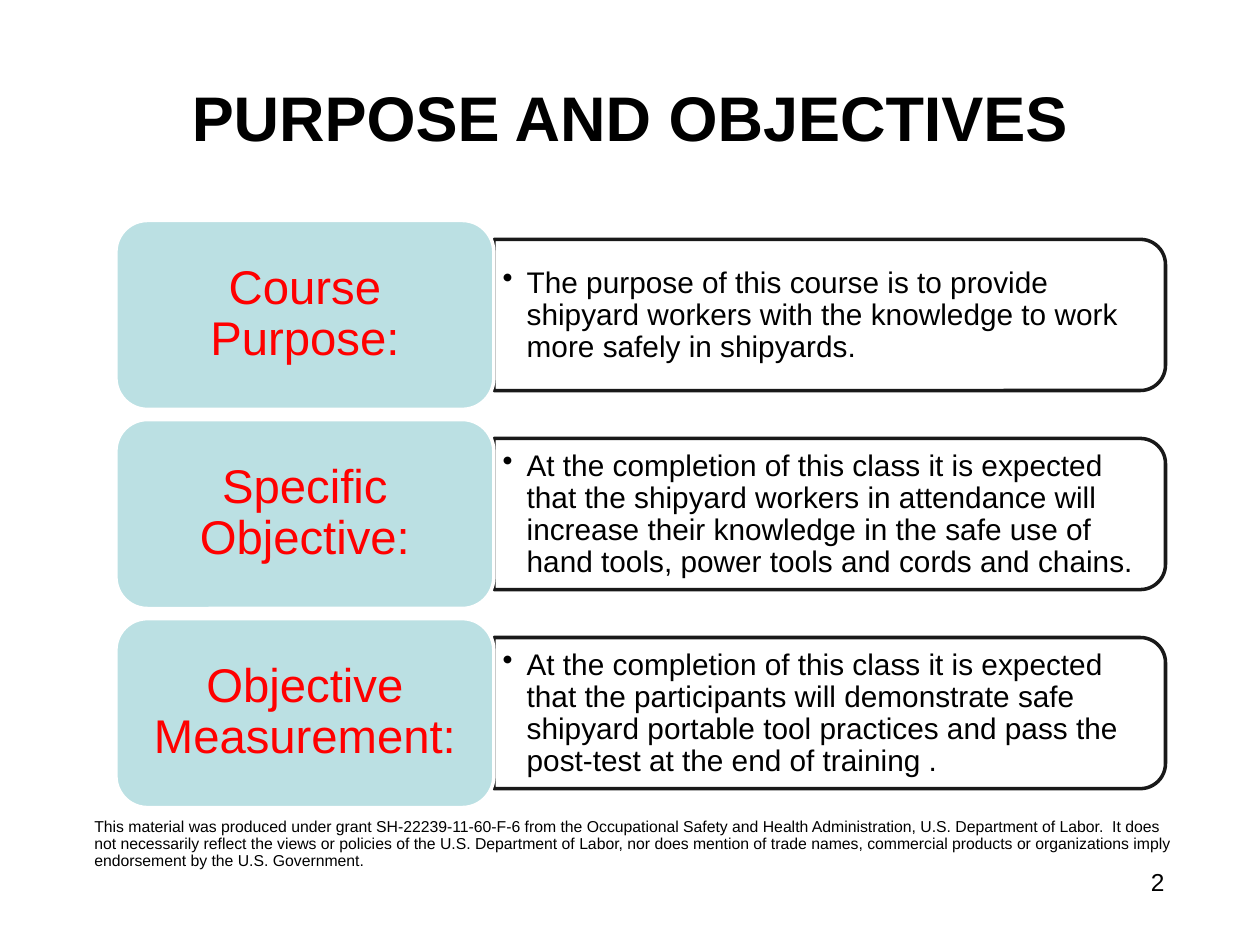
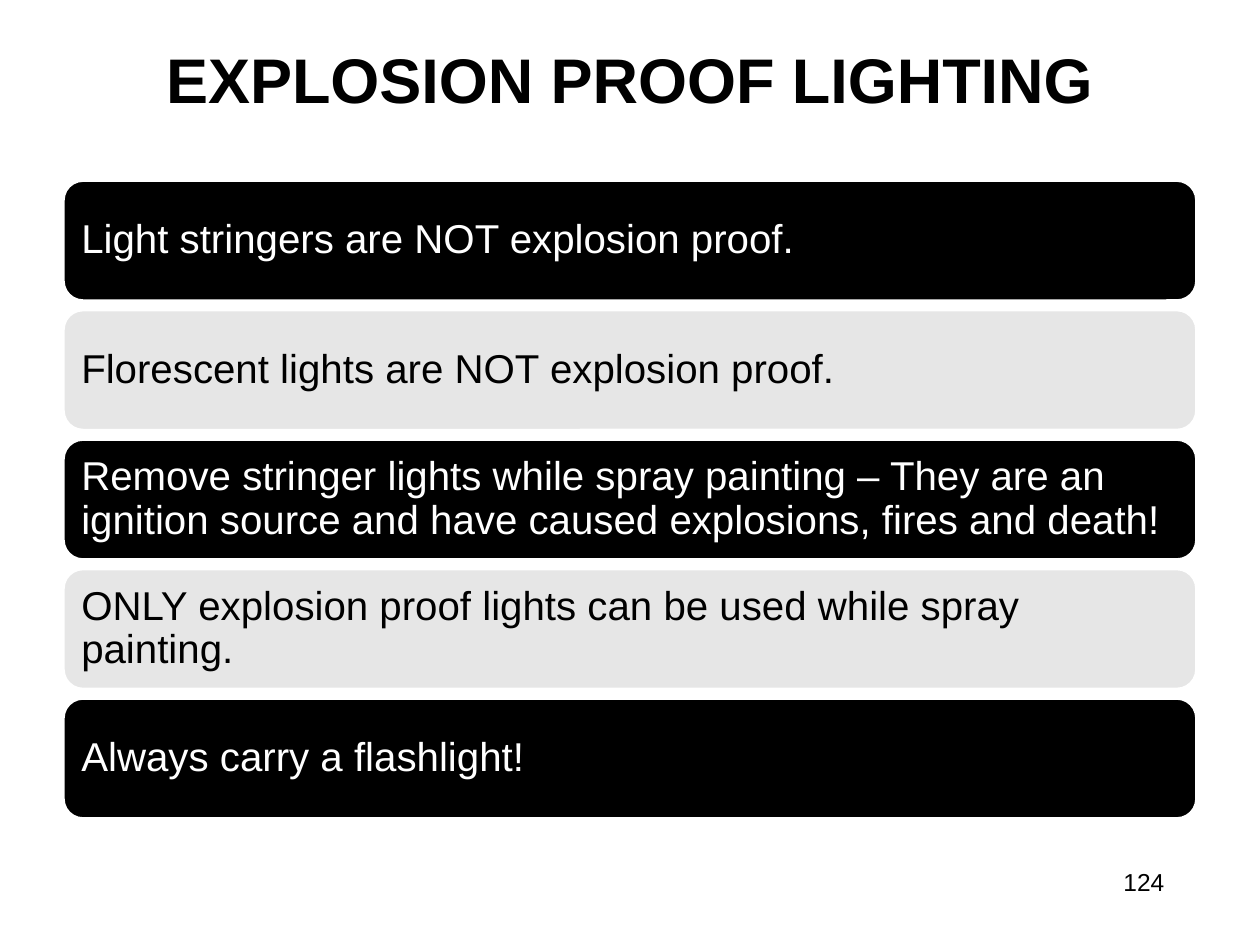
import pptx
import pptx.dml.color
import pptx.enum.shapes
import pptx.enum.text
import pptx.oxml.ns
import pptx.util
from lxml import etree

Inches = pptx.util.Inches
Pt = pptx.util.Pt
RGBColor = pptx.dml.color.RGBColor
ShapeKind = pptx.enum.shapes.MSO_SHAPE
Align = pptx.enum.text.PP_ALIGN
Anchor = pptx.enum.text.MSO_ANCHOR
qn = pptx.oxml.ns.qn

OBJECTIVES_TITLE = "PURPOSE AND OBJECTIVES"
OBJECTIVES = [
    ("Course Purpose:",
     "The purpose of this course is to provide shipyard workers with the "
     "knowledge to work more safely in shipyards."),
    ("Specific Objective:",
     "At the completion of this class it is expected that the shipyard workers "
     "in attendance will increase their knowledge in the safe use of hand "
     "tools, power tools and cords and chains."),
    ("Objective Measurement:",
     "At the completion of this class it is expected that the participants "
     "will demonstrate safe shipyard portable tool practices and pass the "
     "post-test at the end of training ."),
]
GRANT_NOTICE = (
    "This material was produced under grant SH-22239-11-60-F-6 from the "
    "Occupational Safety and Health Administration, U.S. Department of Labor.  "
    "It does not necessarily reflect the views or policies of the U.S. "
    "Department of Labor, nor does mention of trade names, commercial products "
    "or organizations imply endorsement by the U.S. Government."
)
LIGHTING_TITLE = "EXPLOSION PROOF LIGHTING"
LIGHTING_RULES = [
    "Light stringers are NOT explosion proof.",
    "Florescent lights are NOT explosion proof.",
    "Remove stringer lights while spray painting – They are an ignition source "
    "and have caused explosions, fires and death!",
    "ONLY explosion proof lights can be used while spray painting.",
    "Always carry a flashlight!",
]

FONT = "Arial"
BLACK = RGBColor(0x00, 0x00, 0x00)
WHITE = RGBColor(0xFF, 0xFF, 0xFF)
RED = RGBColor(0xFF, 0x00, 0x00)
PALE_TEAL = RGBColor(0xBB, 0xE0, 0xE3)
PALE_GRAY = RGBColor(0xE6, 0xE6, 0xE6)
BAR_STYLES = [(BLACK, WHITE), (PALE_GRAY, BLACK)]

LABEL_LEFT, LABEL_TOP, LABEL_WIDTH, LABEL_HEIGHT = 0.92, 1.75, 3, 1.5
LABEL_STEP = 1.58
PANEL_WIDTH, PANEL_HEIGHT = 5.33, 1.2
BULLET_INDENT = 0.19
BAR_LEFT, BAR_TOP, BAR_WIDTH, BAR_HEIGHT = 0.5, 1.43, 9, 0.96
BAR_BOTTOM = 6.5


def write(shape, text, size, color=BLACK, align=Align.LEFT, anchor=Anchor.MIDDLE,
          insets=(0.1, 0.05), spacing=0.9, bold=False, bullet=False):
    frame = shape.text_frame
    frame.word_wrap = True
    frame.vertical_anchor = anchor
    frame.margin_left = frame.margin_right = Inches(insets[0])
    frame.margin_top = frame.margin_bottom = Inches(insets[1])
    para = frame.paragraphs[0]
    para.text = text
    para.alignment = align
    para.line_spacing = spacing
    if bullet:
        properties = para._p.get_or_add_pPr()
        properties.set("marL", str(Inches(BULLET_INDENT)))
        properties.set("indent", str(-Inches(BULLET_INDENT)))
        etree.SubElement(properties, qn("a:buChar")).set("char", "•")
    para.font.name = FONT
    para.font.size = Pt(size)
    para.font.bold = bold
    para.font.color.rgb = color


def add_text(page, area, text, size, **style):
    box = page.shapes.add_textbox(*map(Inches, area))
    write(box, text, size, **style)


def add_outlined(page, kind, area, line_color, fill=None):
    shape = page.shapes.add_shape(kind, *map(Inches, area))
    shape.shadow.inherit = False
    if fill is None:
        shape.fill.background()
    else:
        shape.fill.solid()
        shape.fill.fore_color.rgb = fill
    shape.line.color.rgb = line_color
    shape.line.width = Pt(2)
    return shape


def add_panel(page, left, middle):
    area = (left + (PANEL_WIDTH - PANEL_HEIGHT) / 2, middle - PANEL_WIDTH / 2,
            PANEL_HEIGHT, PANEL_WIDTH)
    panel = add_outlined(page, ShapeKind.ROUND_2_SAME_RECTANGLE, area, BLACK)
    panel.rotation = 90
    line_color = panel.line._ln.find(".//" + qn("a:srgbClr"))
    etree.SubElement(line_color, qn("a:alpha")).set("val", "90000")


def add_page(deck, title, title_top, number):
    page = deck.slides.add_slide(deck.slide_layouts[6])
    add_text(page, (0.5, title_top, 9, 1.25), title, 36,
             align=Align.CENTER, spacing=1.0, bold=True)
    add_text(page, (7.17, 6.83, 2.17, 0.52), str(number), 14,
             align=Align.RIGHT, anchor=Anchor.TOP, spacing=1.0)
    return page


def build_objectives(deck):
    page = add_page(deck, OBJECTIVES_TITLE, 0.3, 2)
    panel_left = LABEL_LEFT + LABEL_WIDTH
    for row, (label, detail) in enumerate(OBJECTIVES):
        top = LABEL_TOP + row * LABEL_STEP
        middle = top + LABEL_HEIGHT / 2
        add_panel(page, panel_left, middle)
        add_text(page, (panel_left, middle - 0.54, 5.27, 1.09), detail, 17,
                 insets=(0.07, 0.04), bullet=True)
        card = add_outlined(page, ShapeKind.ROUNDED_RECTANGLE,
                            (LABEL_LEFT, top, LABEL_WIDTH, LABEL_HEIGHT),
                            WHITE, PALE_TEAL)
        write(card, label, 27, color=RED, align=Align.CENTER, insets=(0.11, 0.06))
    add_text(page, (0.65, 6.45, 8.75, 0.51), GRANT_NOTICE, 9, anchor=Anchor.TOP)


def build_lighting(deck):
    page = add_page(deck, LIGHTING_TITLE, 0, 124)
    step = (BAR_BOTTOM - BAR_HEIGHT - BAR_TOP) / (len(LIGHTING_RULES) - 1)
    for row, rule in enumerate(LIGHTING_RULES):
        fill, color = BAR_STYLES[row % len(BAR_STYLES)]
        bar = add_outlined(page, ShapeKind.ROUNDED_RECTANGLE,
                           (BAR_LEFT, BAR_TOP + row * step, BAR_WIDTH, BAR_HEIGHT),
                           WHITE, fill)
        write(bar, rule, 23, color=color, insets=(0.1, 0.1))


def main():
    deck = pptx.Presentation()
    deck.slide_width = Inches(10)
    deck.slide_height = Inches(7.5)
    build_objectives(deck)
    build_lighting(deck)
    deck.save("out.pptx")


if __name__ == "__main__":
    main()
